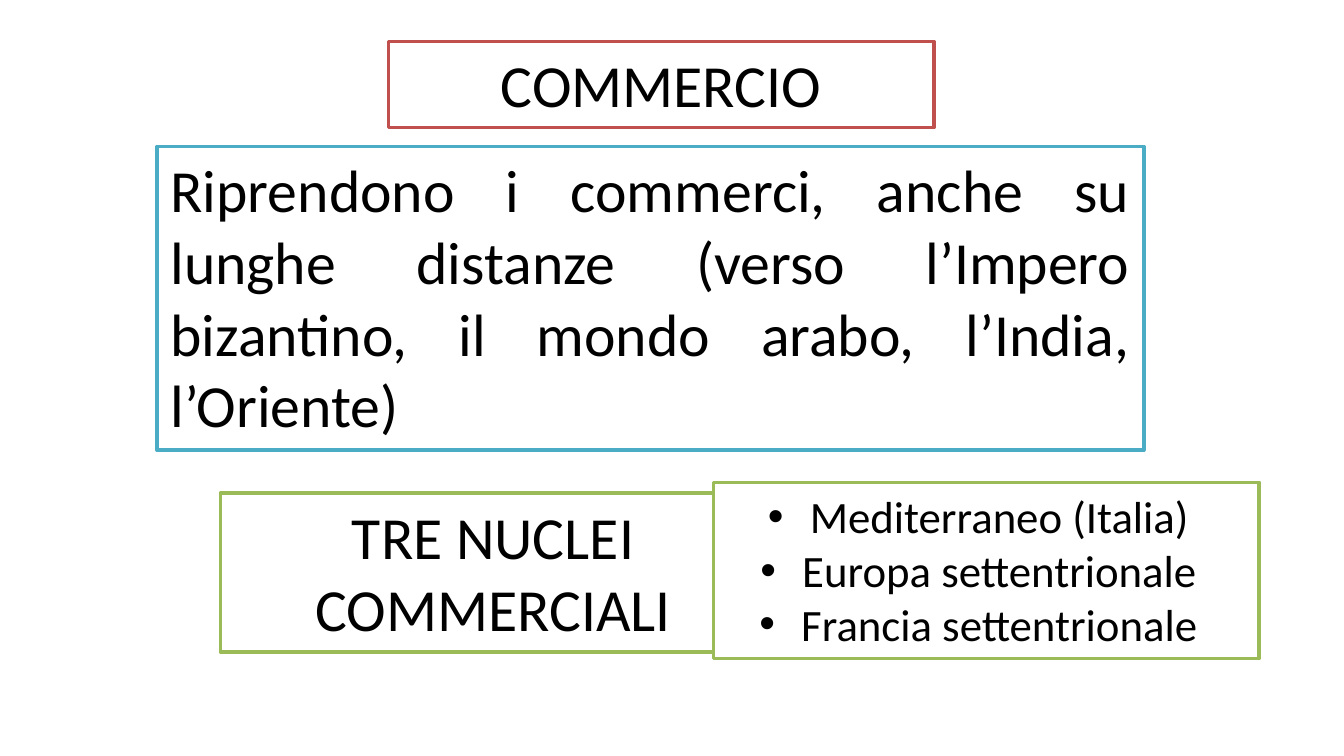
import pptx
import pptx.util
import pptx.dml.color
import pptx.enum.shapes
import pptx.enum.text
import pptx.oxml.ns
import lxml.etree

RGB = pptx.dml.color.RGBColor
WHITE = RGB(0xFF, 0xFF, 0xFF)
BLACK = RGB(0x00, 0x00, 0x00)
RED = RGB(0xC0, 0x50, 0x4D)
TEAL = RGB(0x4B, 0xAC, 0xC6)
GREEN = RGB(0x9B, 0xBB, 0x59)

ALIGN = pptx.enum.text.PP_ALIGN
SLIDE_WIDTH = 10
SLIDE_HEIGHT = SLIDE_WIDTH * 9 / 16
CARD_WIDTH = 4.06


def add_bullet(paragraph):
    """Put a round bullet before the paragraph."""
    properties = paragraph._p.get_or_add_pPr()
    for tag, attribute, value in (("a:buFont", "typeface", "Arial"),
                                  ("a:buChar", "char", "•")):
        mark = lxml.etree.SubElement(properties, pptx.oxml.ns.qn(tag))
        mark.set(attribute, value)


def add_card(slide, box, border, lines, size=32, align=ALIGN.CENTER, bullets=False):
    """Draw a white outlined card that fills box (left, top, width, height)."""
    card = slide.shapes.add_shape(pptx.enum.shapes.MSO_SHAPE.RECTANGLE,
                                  *map(pptx.util.Inches, box))
    card.shadow.inherit = False
    card.fill.solid()
    card.fill.fore_color.rgb = WHITE
    card.line.color.rgb = border
    card.line.width = pptx.util.Pt(2)

    frame = card.text_frame
    frame_format = {
        "word_wrap": True,
        "auto_size": pptx.enum.text.MSO_AUTO_SIZE.SHAPE_TO_FIT_TEXT,
        "vertical_anchor": pptx.enum.text.MSO_ANCHOR.TOP,
    }
    for name, value in frame_format.items():
        setattr(frame, name, value)

    font_format = {"name": "Calibri", "size": pptx.util.Pt(size)}
    for index, line in enumerate(lines):
        paragraph = frame.add_paragraph() if index else frame.paragraphs[0]
        paragraph.alignment = align
        if bullets:
            add_bullet(paragraph)
        run = paragraph.add_run()
        run.text = line
        run.font.color.rgb = BLACK
        for name, value in font_format.items():
            setattr(run.font, name, value)


def add_trade_slide(slide):
    # Title
    add_card(slide, (2.89, 0.31, CARD_WIDTH, 0.64), RED, ["COMMERCIO"])
    # Trade centres heading, partly under the list
    add_card(slide, (1.64, 3.67, CARD_WIDTH, 1.18), GREEN, ["TRE NUCLEI COMMERCIALI"])
    # Summary
    summary = ("Riprendono i commerci, anche su lunghe distanze (verso l’Impero "
               "bizantino, il mondo arabo, l’India, l’Oriente)")
    add_card(slide, (1.17, 1.09, 7.34, 2.26), TEAL, [summary], align=ALIGN.JUSTIFY)
    # List of trade centres
    centres = [" Mediterraneo (Italia)", " Europa settentrionale", " Francia settentrionale"]
    add_card(slide, (5.31, 3.59, CARD_WIDTH, 1.31), GREEN, centres, size=24, bullets=True)


def main():
    deck = pptx.Presentation()
    deck.slide_width = pptx.util.Inches(SLIDE_WIDTH)
    deck.slide_height = pptx.util.Inches(SLIDE_HEIGHT)
    add_trade_slide(deck.slides.add_slide(deck.slide_layouts[6]))
    deck.save("out.pptx")


if __name__ == "__main__":
    main()
